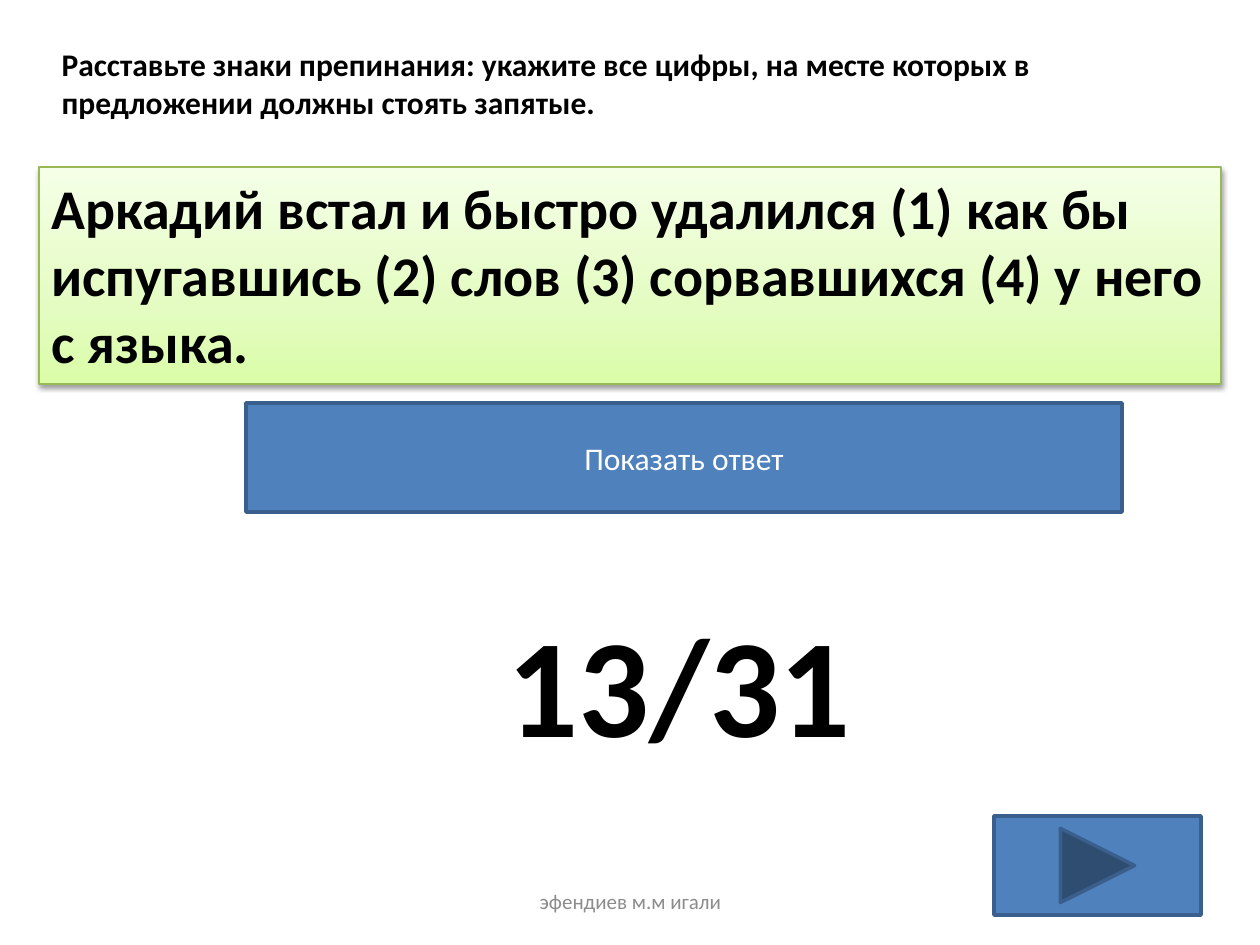
"""Build a punctuation quiz slide with an answer button and a forward button."""
import copy

import pptx
import pptx.dml.color
import pptx.enum.shapes
import pptx.enum.text
import pptx.oxml
import pptx.oxml.ns
import pptx.util

SHAPE = pptx.enum.shapes.MSO_SHAPE
ALIGN = pptx.enum.text.PP_ALIGN
ANCHOR = pptx.enum.text.MSO_ANCHOR

TASK = "Расставьте знаки препинания: укажите все цифры, на месте которых в предложении должны стоять запятые."
SENTENCE = "Аркадий встал и быстро удалился (1) как бы испугавшись (2) слов (3) сорвавшихся (4) у него с языка."
BUTTON = "Показать ответ"
COUNTER = "13/31"
FOOTER = "эфендиев м.м игали"

BOXES = {
    "task": (49, 39, 1172, 89),
    "sentence": (39, 167, 1182, 217),
    "button": (246, 403, 876, 109),
    "counter": (246, 591, 867, 183),
    "footer": (431, 876, 399, 50),
    "next": (994, 816, 207, 99),
}
THEME = {
    "font": "Calibri",
    "text": "000000",
    "button": "4F81BD",
    "button_line": "3A5F8C",
    "button_text": "FFFFFF",
    "footer": "8C8C8C",
    "panel_line": "98B955",
    "panel": [(0, "DAFDA7"), (0.35, "E4FCC2"), (1, "F5FFE7")],
    "small": 12,
    "normal": 18,
    "large": 32,
    "huge": 80,
}
SHADOW = (
    '<a:outerShdw %s blurRad="40000" dist="20000" dir="5400000" rotWithShape="0">'
    '<a:srgbClr val="000000"><a:alpha val="38000"/></a:srgbClr></a:outerShdw>'
    % pptx.oxml.ns.nsdecls("a")
)


def px(n):
    return pptx.util.Emu(round(n * 914400 / 126))


def rgb(value):
    return pptx.dml.color.RGBColor.from_string(value)


def box(name):
    return [px(n) for n in BOXES[name]]


def write(sp, text, size="normal", color="text", bold=False, align=ALIGN.LEFT, anchor=ANCHOR.TOP):
    tf = sp.text_frame
    tf.word_wrap = True
    tf.auto_size = pptx.enum.text.MSO_AUTO_SIZE.NONE
    tf.vertical_anchor = anchor
    p = tf.paragraphs[0]
    p.alignment = align
    r = p.add_run()
    r.text = text
    r.font.name = THEME["font"]
    r.font.size = pptx.util.Pt(THEME[size])
    r.font.bold = bold
    r.font.color.rgb = rgb(THEME[color])


def add_box(s, name, kind, line, width):
    sp = s.shapes.add_shape(kind, *box(name))
    sp.shadow.inherit = False
    sp.line.color.rgb = rgb(THEME[line])
    sp.line.width = pptx.util.Pt(width)
    return sp


def add_button(s, name, kind):
    sp = add_box(s, name, kind, "button_line", 2)
    sp.fill.solid()
    sp.fill.fore_color.rgb = rgb(THEME["button"])
    return sp


def add_panel(s, name):
    sp = add_box(s, name, SHAPE.RECTANGLE, "panel_line", 0.75)
    sp.fill.gradient()
    sp.fill.gradient_angle = 90
    stops = sp.element.spPr.find(".//" + pptx.oxml.ns.qn("a:gsLst"))
    stops.append(copy.deepcopy(stops[-1]))
    for stop, (position, color) in zip(sp.fill.gradient_stops, THEME["panel"]):
        stop.position = position
        stop.color.rgb = rgb(color)
    effects = sp.element.spPr.find(pptx.oxml.ns.qn("a:effectLst"))
    effects.append(pptx.oxml.parse_xml(SHADOW))
    return sp


def main():
    prs = pptx.Presentation()
    prs.slide_width, prs.slide_height = px(1260), px(945)
    s = prs.slides.add_slide(prs.slide_layouts[5])

    title = s.shapes.title
    title.left, title.top, title.width, title.height = box("task")
    write(title, TASK, bold=True)
    write(add_panel(s, "sentence"), SENTENCE, size="large", bold=True)

    button = add_button(s, "button", SHAPE.ACTION_BUTTON_CUSTOM)
    write(button, BUTTON, color="button_text", align=ALIGN.CENTER, anchor=ANCHOR.MIDDLE)

    counter = s.shapes.add_textbox(*box("counter"))
    write(counter, COUNTER, size="huge", bold=True, align=ALIGN.CENTER)
    footer = s.shapes.add_textbox(*box("footer"))
    write(footer, FOOTER, size="small", color="footer", align=ALIGN.CENTER, anchor=ANCHOR.MIDDLE)

    add_button(s, "next", SHAPE.ACTION_BUTTON_FORWARD_OR_NEXT)
    prs.save("out.pptx")


if __name__ == "__main__":
    main()
